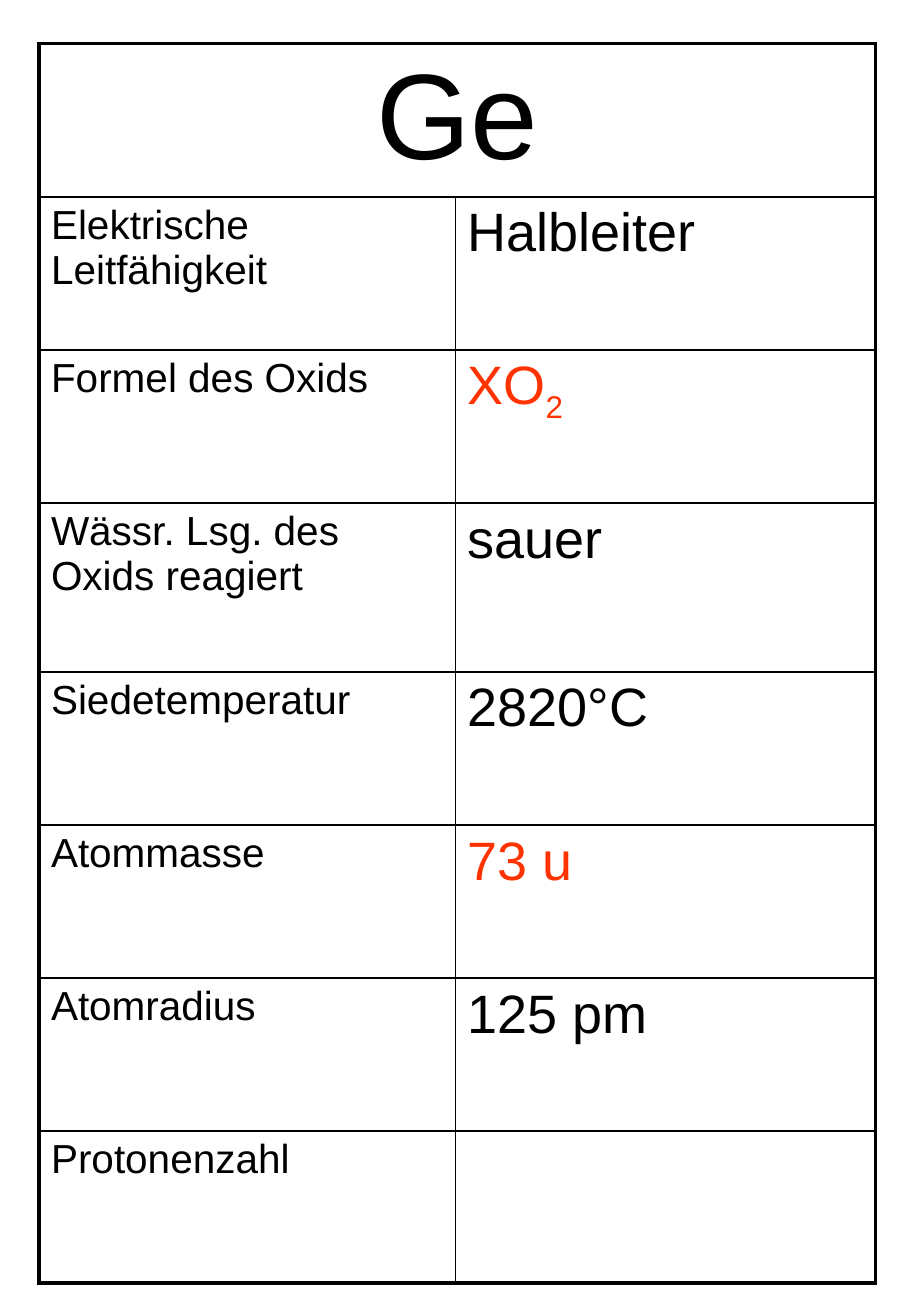
from lxml import etree
from pptx import Presentation
from pptx.dml.color import RGBColor
from pptx.enum.text import PP_ALIGN
from pptx.oxml.ns import qn
from pptx.util import Emu, Pt

PX = 9144  # 100 px to the inch
CENTER, LEFT = PP_ALIGN.CENTER, PP_ALIGN.LEFT
FONT = "Arial"
COLORS = {"text": "000000", "accent": "FF3300", "border": "000000"}
OUTER, INNER = 2.25, 1

SYMBOL = "Ge"
# label, value, subscript, colour of the value
PROPERTIES = [
    ("Elektrische Leitfähigkeit", "Halbleiter", "", "text"),
    ("Formel des Oxids", "XO", "2", "accent"),
    ("Wässr. Lsg. des Oxids reagiert", "sauer", "", "text"),
    ("Siedetemperatur", "2820°C", "", "text"),
    ("Atommasse", "73 u", "", "accent"),
    ("Atomradius", "125 pm", "", "text"),
    ("Protonenzahl", "", "", "text"),
]
COLUMN_WIDTHS = [343, 346]
ROW_HEIGHTS = [126, 126, 126, 139, 126, 126, 126, 125]


def px(length):
    return Emu(length * PX)


def add_span(para, text, size, color, subscript=False):
    span = para.add_run()
    span.text = text
    span.font.name = FONT
    span.font.size = Pt(size)
    span.font.color.rgb = RGBColor.from_string(COLORS[color])
    if subscript:
        span.font._element.set("baseline", "-25000")


def set_space_before(para, percent):
    spacing = etree.SubElement(para._p.get_or_add_pPr(), qn("a:spcBef"))
    etree.SubElement(spacing, qn("a:spcPct"), val=str(percent * 1000))


def fill_cell(cell, text, size, color="text", subscript="", align=LEFT):
    para = cell.text_frame.paragraphs[0]
    para.alignment = align
    set_space_before(para, 20)
    if text:
        add_span(para, text, size, color)
    if subscript:
        add_span(para, subscript, size, color, subscript=True)


def add_border(cell, side, width):
    properties = cell._tc.get_or_add_tcPr()
    line = etree.SubElement(properties, qn(f"a:ln{side}"), w=str(Pt(width)))
    fill = etree.SubElement(line, qn("a:solidFill"))
    etree.SubElement(fill, qn("a:srgbClr"), val=COLORS["border"])


def frame_cells(table):
    """Thick lines around the table, thin ones inside; no cell fill."""
    last_row, last_column = len(table.rows) - 1, len(table.columns) - 1
    for row in range(last_row + 1):
        for column in range(last_column + 1):
            cell = table.cell(row, column)
            span = cell.span_width if cell.is_merge_origin else 1
            on_edge = {
                "L": column == 0,
                "R": column + span - 1 == last_column,
                "T": row == 0,
                "B": row == last_row,
            }
            for side, outer in on_edge.items():
                add_border(cell, side, OUTER if outer else INNER)
            cell.fill.background()


def add_element_table(page):
    frame = page.shapes.add_table(
        len(ROW_HEIGHTS), len(COLUMN_WIDTHS), px(32), px(36),
        px(sum(COLUMN_WIDTHS)), px(sum(ROW_HEIGHTS)))
    table = frame.table
    table.first_row = table.horz_banding = False
    for column, width in zip(table.columns, COLUMN_WIDTHS):
        column.width = px(width)
    for row, height in zip(table.rows, ROW_HEIGHTS):
        row.height = px(height)

    table.cell(0, 0).merge(table.cell(0, 1))
    fill_cell(table.cell(0, 0), SYMBOL, 72, align=CENTER)
    for row, (label, value, subscript, color) in enumerate(PROPERTIES, 1):
        fill_cell(table.cell(row, 0), label, 24)
        fill_cell(table.cell(row, 1), value, 32, color, subscript)
    frame_cells(table)


def main():
    deck = Presentation()
    deck.slide_width, deck.slide_height = px(750), px(1083)
    page = deck.slides.add_slide(deck.slide_layouts[6])
    add_element_table(page)
    deck.save("out.pptx")


if __name__ == "__main__":
    main()
